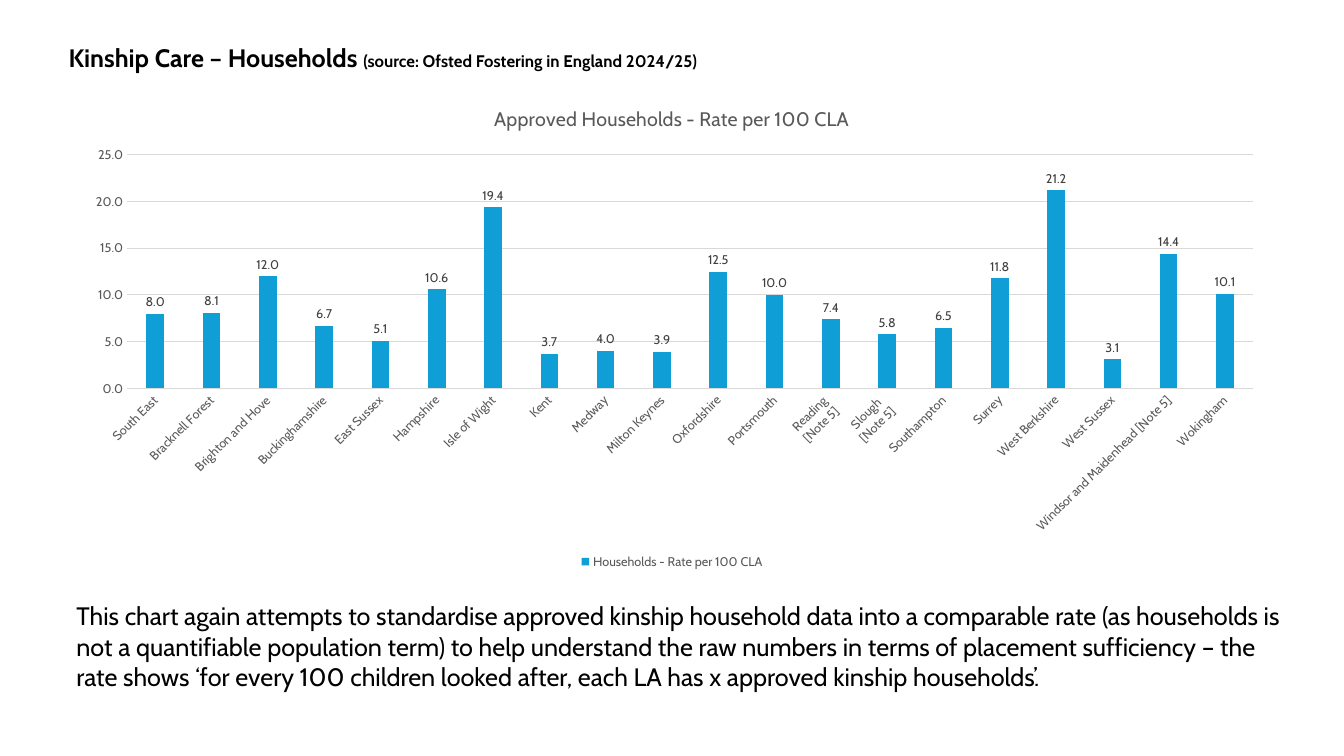
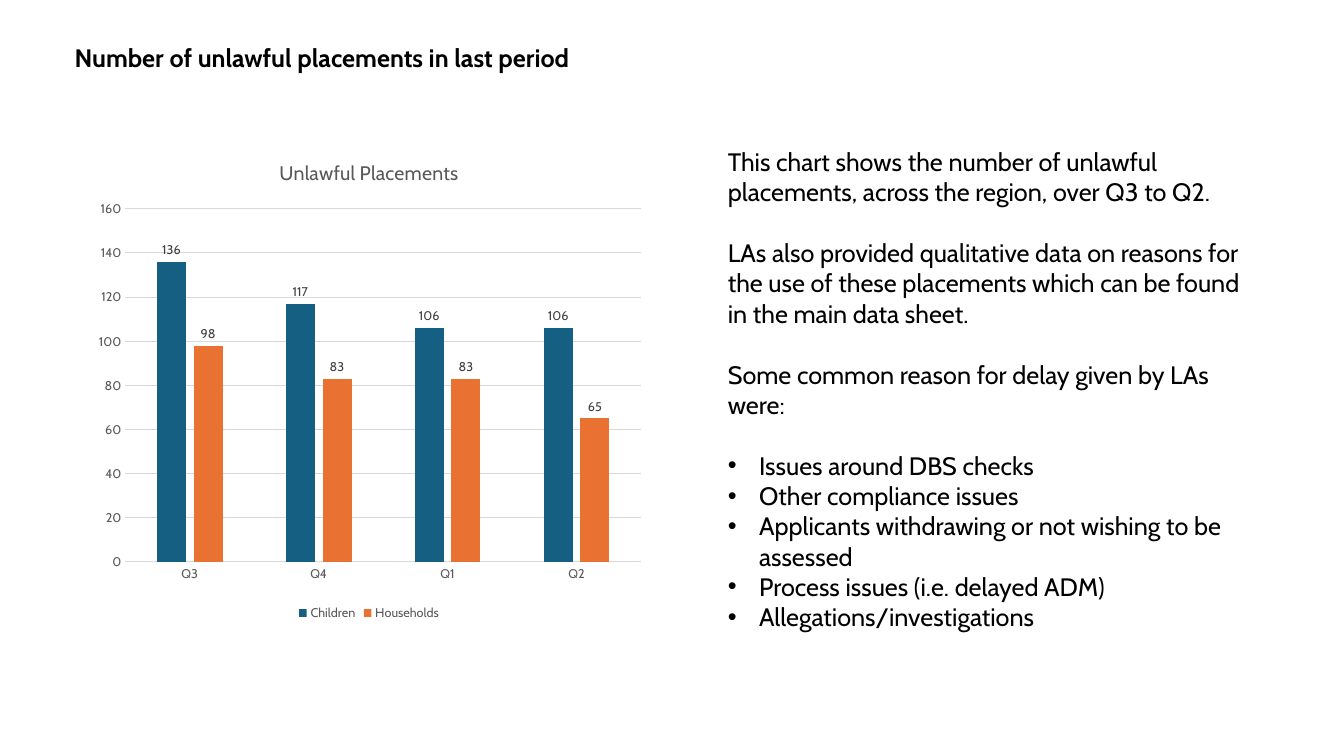
"""Build two slides on kinship care households and unlawful placements."""
from dataclasses import dataclass

from lxml import etree
from pptx import Presentation
from pptx import util as u
from pptx.chart.data import CategoryChartData
from pptx.dml.color import RGBColor
from pptx.enum import chart as ch, text
from pptx.oxml import ns

PX = 9144


@dataclass(frozen=True)
class Theme:
    font: str = "Cabin"
    ink: str = "000000"
    grey: str = "595959"
    label: str = "404040"
    rule: str = "D9D9D9"
    sky: str = "0F9ED5"
    teal: str = "156082"
    orange: str = "E97132"
    body: int = 18
    source: int = 12
    head: int = 14
    small: int = 9


T = Theme()

RATES = {
    "South East": 8, "Bracknell Forest": 8.1, "Brighton and Hove": 12,
    "Buckinghamshire": 6.7, "East Sussex": 5.1, "Hampshire": 10.6,
    "Isle of Wight": 19.4, "Kent": 3.7, "Medway": 4, "Milton Keynes": 3.9,
    "Oxfordshire": 12.5, "Portsmouth": 10, "Reading\n[Note 5]": 7.4,
    "Slough\n[Note 5]": 5.8, "Southampton": 6.5, "Surrey": 11.8,
    "West Berkshire": 21.2, "West Sussex": 3.1,
    "Windsor and Maidenhead [Note 5]": 14.4, "Wokingham": 10.1,
}

RATE_NOTE = (
    "This chart again attempts to standardise approved kinship household data "
    "into a comparable rate (as households is not a quantifiable population "
    "term) to help understand the raw numbers in terms of placement "
    "sufficiency – the rate shows ‘for every 100 children looked after, each "
    "LA has x approved kinship households’."
)

NOTES = [
    "This chart shows the number of unlawful placements, across the region, "
    "over Q3 to Q2.",
    "LAs also provided qualitative data on reasons for the use of these "
    "placements which can be found in the main data sheet.",
    "Some common reason for delay given by LAs were:",
]

CAUSES = [
    "Issues around DBS checks",
    "Other compliance issues",
    "Applicants withdrawing or not wishing to be assessed",
    "Process issues (i.e. delayed ADM)",
    "Allegations/investigations",
]


def px(*vals):
    """Turn px lengths into EMU."""
    return [u.Emu(v * PX) for v in vals]


def style(font, size, color, bold=False):
    """Set typeface, size, colour and weight."""
    font.name = T.font
    font.size = u.Pt(size)
    font.bold = bold
    font.color.rgb = RGBColor.from_string(color)


def add_title(deck, words, left, source=""):
    """Add a title-only slide and fill its title."""
    slide = deck.slides.add_slide(deck.slide_layouts[5])
    title = slide.shapes.title
    title.left, title.top, title.width, title.height = px(left, 37, 1075, 40)
    frame = title.text_frame
    frame.auto_size = text.MSO_AUTO_SIZE.NONE
    frame.vertical_anchor = text.MSO_ANCHOR.TOP
    para = frame.paragraphs[0]
    para.alignment = text.PP_ALIGN.LEFT
    style(para.font, T.body, T.ink, True)
    para.add_run().text = words
    if source:
        run = para.add_run()
        run.text = source
        run.font.size = u.Pt(T.source)
    return slide


def add_bullet(para):
    """Give a paragraph a hanging bullet."""
    props = para._p.get_or_add_pPr()
    indent = 31 * PX
    props.set("marL", str(indent))
    props.set("indent", str(-indent))
    etree.SubElement(props, ns.qn("a:buFont")).set("typeface", "Arial")
    etree.SubElement(props, ns.qn("a:buChar")).set("char", "•")


def add_text(slide, box, notes, points=()):
    """Add spaced paragraphs, then bulleted points."""
    frame = slide.shapes.add_textbox(*px(*box)).text_frame
    frame.word_wrap = True
    lines = [*notes, *points]
    for i, line in enumerate(lines):
        para = frame.paragraphs[0] if i == 0 else frame.add_paragraph()
        para.text = line
        style(para.font, T.body, T.ink)
        if i >= len(notes):
            add_bullet(para)
        elif i < len(lines) - 1:
            para.space_after = u.Pt(22)


def set_plot(chart, area):
    """Fix the inner plot area as shares of the chart."""
    plot = chart._chartSpace.chart.plotArea
    for old in plot.findall(ns.qn("c:layout")):
        plot.remove(old)
    layout = etree.Element(ns.qn("c:layout"))
    plot.insert(0, layout)
    manual = etree.SubElement(layout, ns.qn("c:manualLayout"))
    rules = [("layoutTarget", "inner"), ("xMode", "edge"), ("yMode", "edge")]
    for tag, val in rules + list(zip("xywh", area)):
        etree.SubElement(manual, ns.qn(f"c:{tag}")).set("val", str(val))


def style_axes(chart, top, step, form, turn):
    """Style both axes and the grid."""
    cat, val = chart.category_axis, chart.value_axis
    for axis in (cat, val):
        axis.major_tick_mark = axis.minor_tick_mark = ch.XL_TICK_MARK.NONE
        style(axis.tick_labels.font, T.small, T.grey)
    val.minimum_scale, val.maximum_scale, val.major_unit = 0, top, step
    val.tick_labels.number_format = form
    val.tick_labels.number_format_is_linked = False
    val.format.line.fill.background()
    val.has_major_gridlines = True
    for line in (cat.format.line, val.major_gridlines.format.line):
        line.color.rgb = RGBColor.from_string(T.rule)
        line.width = u.Pt(0.75)
    if turn:
        body = cat._element.find(ns.qn("c:txPr")).find(ns.qn("a:bodyPr"))
        body.set("rot", str(turn * 60000))
        body.set("vert", "horz")


def add_columns(slide, box, title, cats, rows, area, top, step,
                form="General", turn=0):
    """Add a column chart; rows hold name, values and colour."""
    data = CategoryChartData()
    data.categories = cats
    for name, vals, _ in rows:
        data.add_series(name, vals)
    kind = ch.XL_CHART_TYPE.COLUMN_CLUSTERED
    chart = slide.shapes.add_chart(kind, *px(*box), data).chart
    style(chart.font, 10, T.ink)
    chart.has_title = True
    head = chart.chart_title
    head.include_in_layout = False
    head.text_frame.text = title
    style(head.text_frame.paragraphs[0].font, T.head, T.grey)
    chart.has_legend = True
    chart.legend.position = ch.XL_LEGEND_POSITION.BOTTOM
    chart.legend.include_in_layout = False
    style(chart.legend.font, T.small, T.grey)
    style_axes(chart, top, step, form, turn)
    set_plot(chart, area)
    plot = chart.plots[0]
    plot.gap_width, plot.overlap = 219, -27
    plot.vary_by_categories = False
    for series, (_, _, color) in zip(plot.series, rows):
        series.format.fill.solid()
        series.format.fill.fore_color.rgb = RGBColor.from_string(color)
        series.invert_if_negative = False
        labels = series.data_labels
        labels.show_value = True
        labels.position = ch.XL_LABEL_POSITION.OUTSIDE_END
        labels.number_format = form
        labels.number_format_is_linked = False
        style(labels.font, T.small, T.label)


def main():
    """Build and save the deck."""
    deck = Presentation()
    deck.slide_width, deck.slide_height = px(1333, 750)

    slide = add_title(deck, "Kinship Care – Households ", 58,
                      "(source: Ofsted Fostering in England 2024/25)")
    add_text(slide, (66, 591, 1223, 101), [RATE_NOTE])
    add_columns(slide, (66, 86, 1201, 483),
                "Approved Households - Rate per 100 CLA", list(RATES),
                [("Households - Rate per 100 CLA", list(RATES.values()), T.sky)],
                (0.05, 0.14, 0.93, 0.48), 25, 5, "0.0", -45)

    slide = add_title(deck, "Number of unlawful placements in last period", 64)
    add_text(slide, (712, 140, 528, 525), NOTES, CAUSES)
    add_columns(slide, (85, 140, 562, 480), "Unlawful Placements",
                ["Q3", "Q4", "Q1", "Q2"],
                [("Children", [136, 117, 106, 106], T.teal),
                 ("Households", [98, 83, 83, 65], T.orange)],
                (0.07, 0.14, 0.91, 0.73), 160, 20)
    deck.save("out.pptx")


if __name__ == "__main__":
    main()
